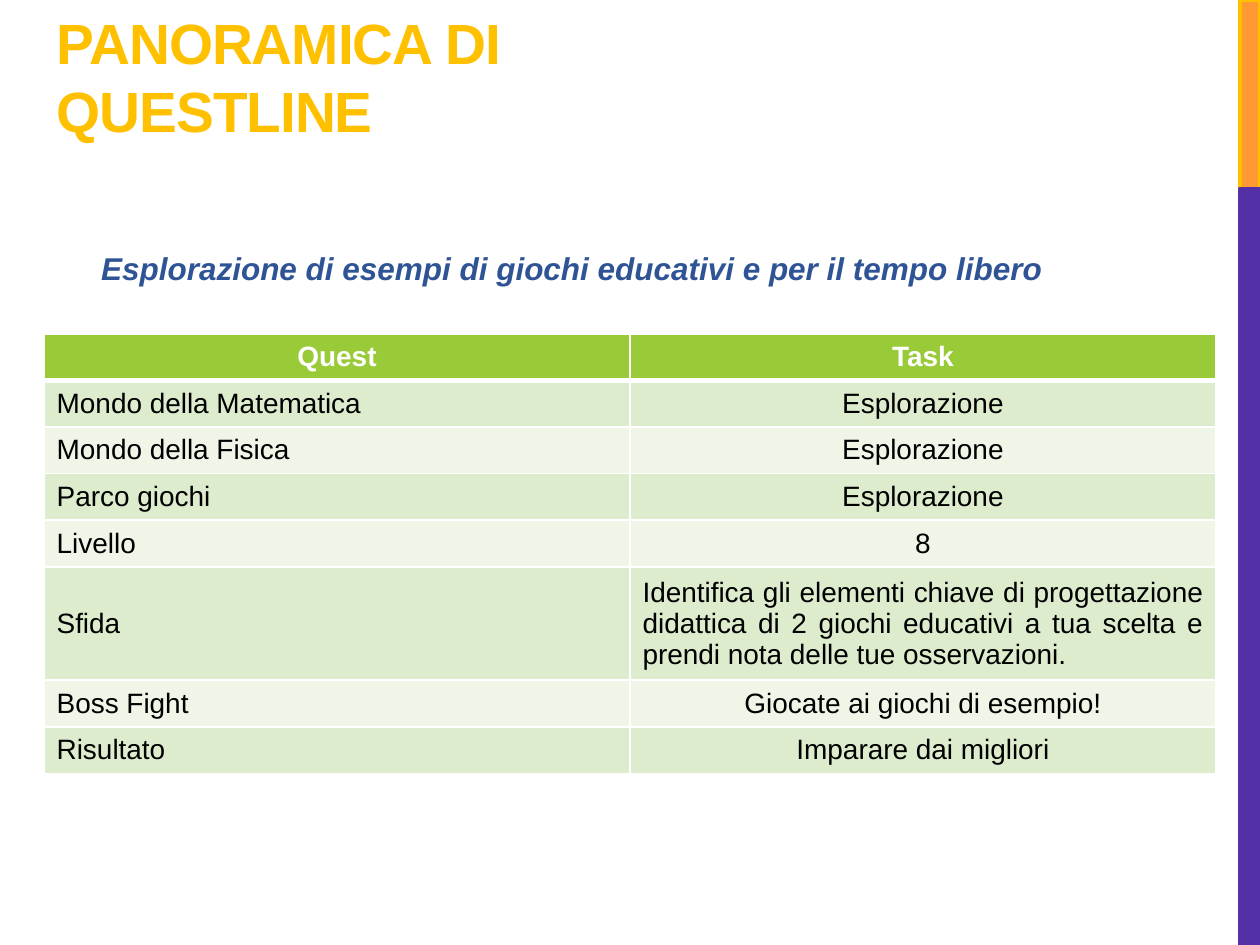
from lxml.etree import SubElement
from pptx import Presentation
from pptx.dml.color import RGBColor
from pptx.enum.shapes import MSO_SHAPE
from pptx.enum.text import MSO_ANCHOR, MSO_AUTO_SIZE, PP_ALIGN
from pptx.oxml.ns import qn
from pptx.util import Inches, Pt

COLORS = {
    "title": "FFC000",
    "subtitle": "2F5496",
    "orange": "FF9933",
    "purple": "5330A5",
    "header": "99CB38",
    "band_dark": "DEECCE",
    "band_light": "EFF6E8",
    "white": "FFFFFF",
    "black": "000000",
}

ROWS = [
    ("Quest", "Task"),
    ("Mondo della Matematica", "Esplorazione"),
    ("Mondo della Fisica", "Esplorazione"),
    ("Parco giochi", "Esplorazione"),
    ("Livello", "8"),
    ("Sfida", "Identifica gli elementi chiave di progettazione didattica di 2 giochi "
              "educativi a tua scelta e prendi nota delle tue osservazioni."),
    ("Boss Fight", "Giocate ai giochi di esempio!"),
    ("Risultato", "Imparare dai migliori"),
]
CHALLENGE_ROW = 5


class SlideBuilder:
    font = "Arial"

    def __init__(self, prs):
        self.s = prs.slides.add_slide(prs.slide_layouts[5])

    def color(self, name):
        return RGBColor.from_string(COLORS[name])

    def run(self, p, text, size, color, bold=False, italic=False):
        r = p.add_run()
        r.text = text
        r.font.name = self.font
        r.font.size = Pt(size)
        r.font.bold = bold
        r.font.italic = italic
        r.font.color.rgb = self.color(color)
        return r

    def bar(self, top, height, fill, line):
        sp = self.s.shapes.add_shape(MSO_SHAPE.RECTANGLE, Inches(9.84), Inches(top),
                                     Inches(0.16), Inches(height))
        sp.shadow.inherit = False
        sp.fill.solid()
        sp.fill.fore_color.rgb = self.color(fill)
        sp.line.color.rgb = self.color(line)
        sp.line.width = Pt(2.25)

    def title(self, text):
        sp = self.s.shapes.title
        sp.left, sp.top = Inches(0.35), Inches(0.22)
        sp.width, sp.height = Inches(6.33), Inches(1.5)
        tf = sp.text_frame
        tf.word_wrap = True
        tf.auto_size = MSO_AUTO_SIZE.NONE
        tf.vertical_anchor = MSO_ANCHOR.BOTTOM
        tf.margin_top = 0
        tf.margin_right, tf.margin_bottom = Inches(0.3), Inches(0.58)
        p = tf.paragraphs[0]
        p.alignment = PP_ALIGN.LEFT
        r = self.run(p, text, 32.4, "title", bold=True)
        r.font._element.set("spc", "-60")

    def subtitle(self, text):
        sp = self.s.shapes.add_textbox(Inches(0.71), Inches(1.78), Inches(8.35), Inches(1.04))
        tf = sp.text_frame
        tf.word_wrap = True
        tf.margin_left, tf.margin_right = 0, Inches(0.69)
        p = tf.paragraphs[0]
        p.alignment = PP_ALIGN.CENTER
        p.line_spacing = 1.5
        self.run(p, text, 18, "subtitle", bold=True, italic=True)

    def border(self, cell, side, width):
        ln = SubElement(cell._tc.get_or_add_tcPr(), qn(f"a:{side}"), w=str(Pt(width)))
        fill = SubElement(ln, qn("a:solidFill"))
        SubElement(fill, qn("a:srgbClr"), val=COLORS["white"])

    def cell(self, cell, text, fill, align, header, thick_sides):
        for side in ("lnL", "lnR", "lnT", "lnB"):
            self.border(cell, side, 3 if side in thick_sides else 1)
        cell.fill.solid()
        cell.fill.fore_color.rgb = self.color(fill)
        cell.vertical_anchor = MSO_ANCHOR.MIDDLE
        p = cell.text_frame.paragraphs[0]
        p.alignment = align
        self.run(p, text, 16, "white" if header else "black", bold=header)

    def table(self, rows):
        frame = self.s.shapes.add_table(len(rows), 2, Inches(0.35), Inches(2.65),
                                        Inches(9.3), Inches(3.47))
        tbl = frame.table
        for col in tbl.columns:
            col.width = Inches(4.65)
        for i, row in enumerate(rows):
            tbl.rows[i].height = Inches(0.88 if i == CHALLENGE_ROW else 0.37)
            header = i == 0
            fill = "header" if header else ("band_light", "band_dark")[i % 2]
            thick_sides = {0: ("lnB",), 1: ("lnT",)}.get(i, ())
            for j, text in enumerate(row):
                align = PP_ALIGN.CENTER if header or j else PP_ALIGN.LEFT
                if j and i == CHALLENGE_ROW:
                    align = PP_ALIGN.JUSTIFY
                self.cell(tbl.cell(i, j), text, fill, align, header, thick_sides)


def main():
    prs = Presentation()
    prs.slide_width, prs.slide_height = Inches(10), Inches(7.5)
    slide = SlideBuilder(prs)
    slide.bar(0, 1.5, "orange", "title")
    slide.bar(1.5, 6, "purple", "purple")
    slide.title("PANORAMICA DI QUESTLINE")
    slide.subtitle("Esplorazione di esempi di giochi educativi e per il tempo libero")
    slide.table(ROWS)
    prs.save("out.pptx")


if __name__ == "__main__":
    main()
